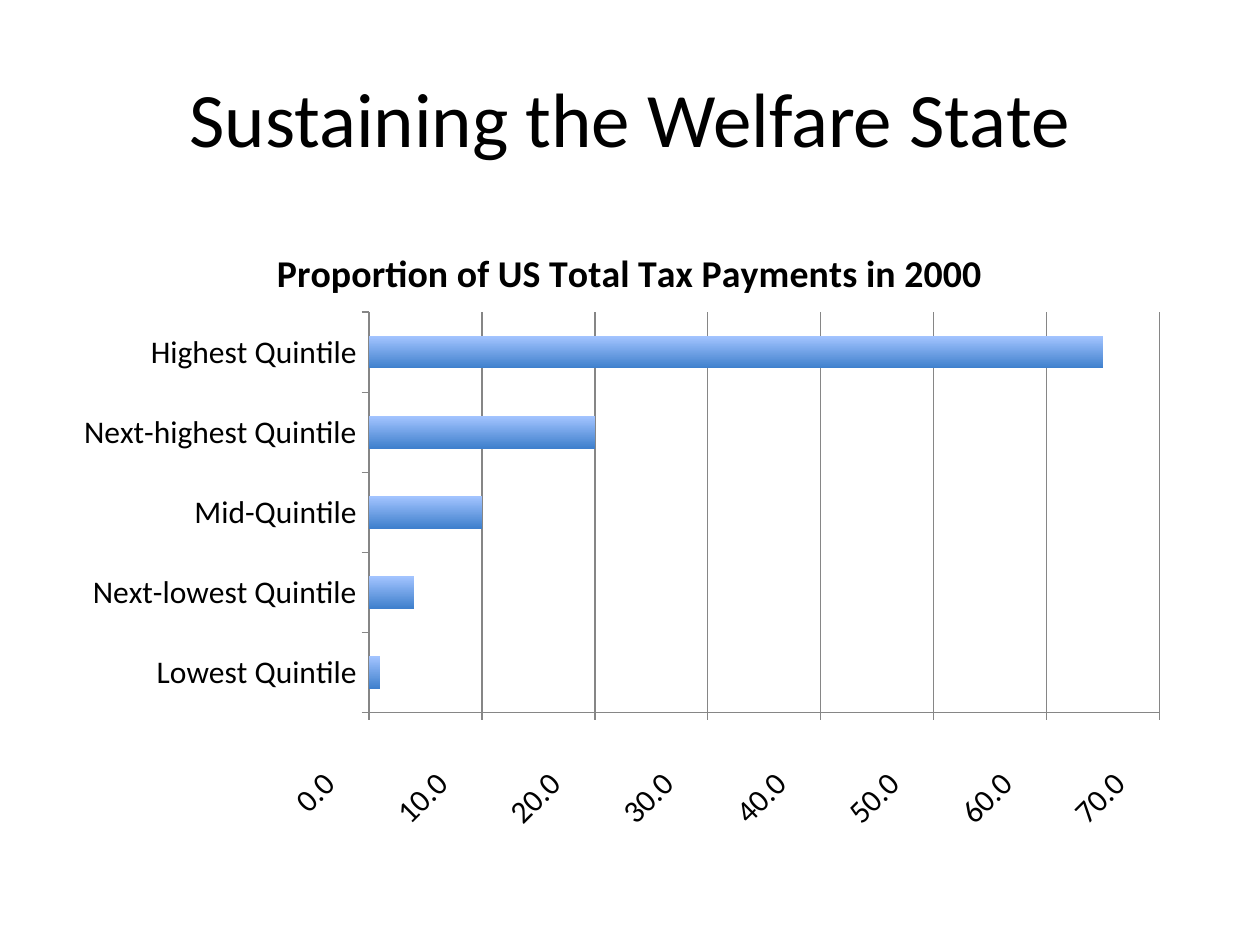
from dataclasses import dataclass

import lxml.etree
import pptx
import pptx.chart.data
import pptx.dml.color
import pptx.enum.chart
import pptx.enum.text
import pptx.oxml
import pptx.oxml.ns
import pptx.util

Pt = pptx.util.Pt


@dataclass(frozen=True)
class Theme:
    font: str = "Calibri"
    text: str = "000000"
    axis: str = "868686"
    bar_top: str = "A3C4FF"
    bar_bottom: str = "3F80CD"
    title_size: float = 44
    chart_title_size: float = 21.6
    label_size: float = 18


class SlideBuilder:
    def __init__(self, slide, theme):
        self.slide = slide
        self.theme = theme

    def style_font(self, font, size, bold=False):
        font.name = self.theme.font
        font.size = Pt(size)
        font.bold = bold
        font.color.rgb = pptx.dml.color.RGBColor.from_string(self.theme.text)

    def style_line(self, line):
        line.width = Pt(0.75)
        line.color.rgb = pptx.dml.color.RGBColor.from_string(self.theme.axis)

    def add_title(self, text, left, top, width, height):
        title = self.slide.shapes.title
        title.left, title.top = Pt(left), Pt(top)
        title.width, title.height = Pt(width), Pt(height)
        title.text_frame.vertical_anchor = pptx.enum.text.MSO_ANCHOR.MIDDLE
        paragraph = title.text_frame.paragraphs[0]
        paragraph.alignment = pptx.enum.text.PP_ALIGN.CENTER
        run = paragraph.add_run()
        run.text = text
        self.style_font(run.font, self.theme.title_size)

    def add_bar_chart(self, title, values, left, top, width, height):
        data = pptx.chart.data.CategoryChartData()
        data.categories = list(values)
        data.add_series("Series 1", list(values.values()))
        chart = self.slide.shapes.add_chart(
            pptx.enum.chart.XL_CHART_TYPE.BAR_CLUSTERED,
            Pt(left), Pt(top), Pt(width), Pt(height), data,
        ).chart
        chart.has_legend = False
        self.style_font(chart.font, self.theme.label_size)

        run = chart.chart_title.text_frame.paragraphs[0].add_run()
        run.text = title
        self.style_font(run.font, self.theme.chart_title_size, bold=True)
        chart.chart_title.include_in_layout = False

        plot = chart.plots[0]
        plot.gap_width = 150
        plot.vary_by_categories = False
        self.fill_bars(plot.series[0])
        self.style_axes(chart)
        self.place_plot(chart, x=0.27, y=0.147, w=0.697, h=0.642)

    def fill_bars(self, series):
        fill = series.format.fill
        fill.gradient()
        fill.gradient_angle = 270
        colors = (self.theme.bar_top, self.theme.bar_bottom)
        for stop, color in zip(fill.gradient_stops, colors):
            stop.color.rgb = pptx.dml.color.RGBColor.from_string(color)
        series.invert_if_negative = False

    def style_axes(self, chart):
        for axis in (chart.category_axis, chart.value_axis):
            axis.major_tick_mark = pptx.enum.chart.XL_TICK_MARK.OUTSIDE
            axis.minor_tick_mark = pptx.enum.chart.XL_TICK_MARK.NONE
            self.style_line(axis.format.line)
            self.style_font(axis.tick_labels.font, self.theme.label_size)
        axis = chart.value_axis
        axis.minimum_scale, axis.maximum_scale, axis.major_unit = 0, 70, 10
        axis.has_major_gridlines = True
        self.style_line(axis.major_gridlines.format.line)
        axis.tick_labels.number_format = "0.0" + r"\ " * 8
        axis.tick_labels.number_format_is_linked = False
        body = axis._element.find(".//" + pptx.oxml.ns.qn("a:bodyPr"))
        body.set("rot", str(-45 * 60000))
        body.set("vert", "horz")

    def place_plot(self, chart, **fractions):
        """Fix the inner plot area as fractions of the chart frame."""
        qn = pptx.oxml.ns.qn
        plot_area = chart._chartSpace.find(".//" + qn("c:plotArea"))
        layout = plot_area.find(qn("c:layout"))
        if layout is None:
            layout = pptx.oxml.parse_xml(f"<c:layout {pptx.oxml.ns.nsdecls('c')}/>")
            plot_area.insert(0, layout)
        manual = lxml.etree.SubElement(layout, qn("c:manualLayout"))
        settings = {"layoutTarget": "inner", "xMode": "edge", "yMode": "edge"}
        for name, value in {**settings, **fractions}.items():
            lxml.etree.SubElement(manual, qn(f"c:{name}")).set("val", str(value))


def main():
    presentation = pptx.Presentation()
    presentation.slide_width, presentation.slide_height = Pt(720), Pt(540)
    slide = presentation.slides.add_slide(presentation.slide_layouts[5])
    builder = SlideBuilder(slide, Theme())
    builder.add_title("Sustaining the Welfare State", 36, 21.6, 648, 90)
    tax_shares = {
        "Lowest Quintile": 1,
        "Next-lowest Quintile": 4,
        "Mid-Quintile": 10,
        "Next-highest Quintile": 20,
        "Highest Quintile": 65,
    }
    builder.add_bar_chart(
        "Proportion of US Total Tax Payments in 2000", tax_shares, 36, 126, 648, 356.4
    )
    presentation.save("out.pptx")


if __name__ == "__main__":
    main()
